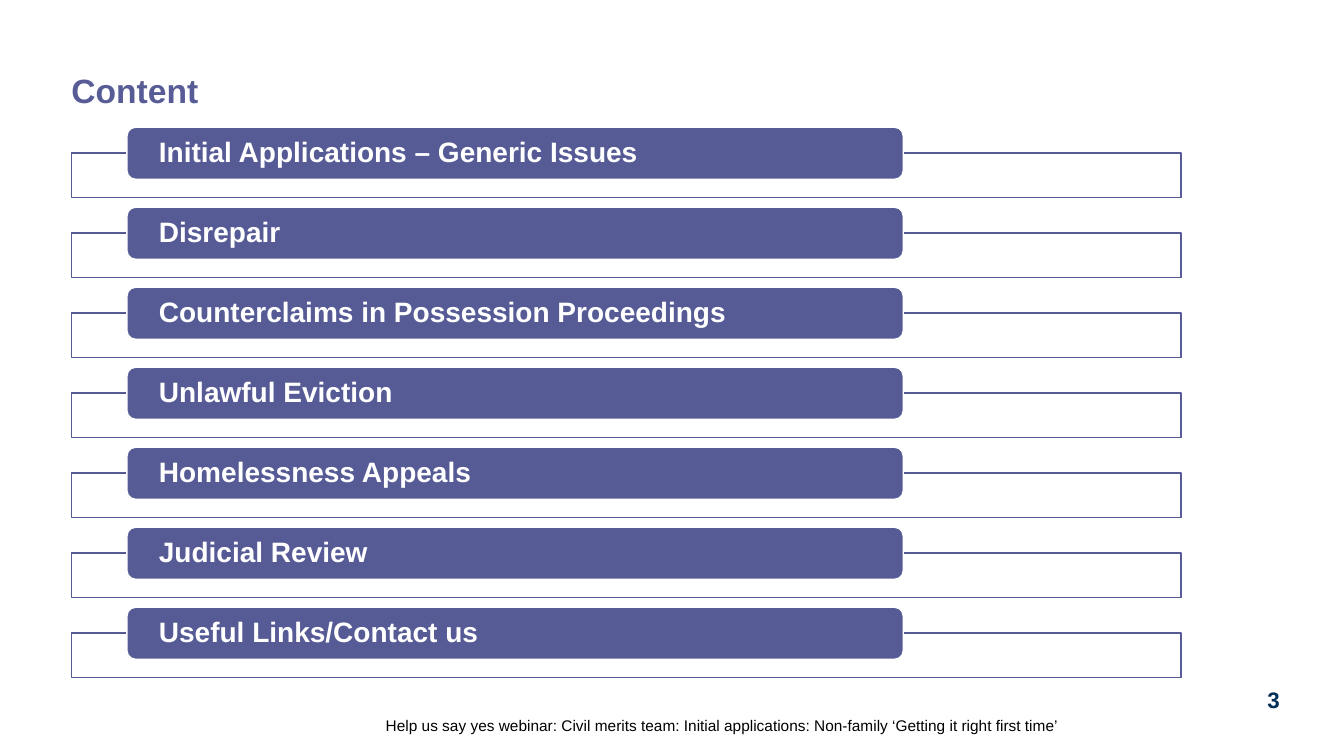
from dataclasses import dataclass

from lxml.etree import SubElement
from pptx import Presentation
from pptx.dml.color import RGBColor as Color
from pptx.enum.shapes import MSO_SHAPE as Shape
from pptx.enum.text import MSO_ANCHOR as Anchor, PP_ALIGN as Align
from pptx.oxml.ns import qn
from pptx.util import Pt


@dataclass(frozen=True)
class Theme:
    font: str = "Arial"
    title: Color = Color.from_string("575C96")
    bar: Color = Color.from_string("565B96")
    white: Color = Color.from_string("FFFFFF")
    number: Color = Color.from_string("003057")
    footer: Color = Color.from_string("000000")
    title_size: int = 24
    bar_size: int = 20
    number_size: int = 16
    footer_size: int = 11


theme = Theme()


def write(shape, text, size, color, bold=True, align=Align.LEFT,
          anchor=Anchor.TOP, side_margin=0, line_spacing=1.0):
    frame = shape.text_frame
    frame.word_wrap = True
    frame.vertical_anchor = anchor
    frame.margin_left = frame.margin_right = Pt(side_margin)
    frame.margin_top = frame.margin_bottom = 0
    paragraph = frame.paragraphs[0]
    paragraph.alignment = align
    paragraph.line_spacing = line_spacing
    run = paragraph.add_run()
    run.text = text
    run.font.name = theme.font
    run.font.size = Pt(size)
    run.font.bold = bold
    run.font.color.rgb = color


def add_panel(kind, left, top, width, height, fill, line):
    shape = slide.shapes.add_shape(kind, Pt(left), Pt(top), Pt(width), Pt(height))
    shape.shadow.inherit = False
    shape.fill.solid()
    shape.fill.fore_color.rgb = fill
    shape.line.color.rgb = line
    shape.line.width = Pt(1)
    return shape


presentation = Presentation()
presentation.slide_width = Pt(960)
presentation.slide_height = Pt(540)
slide = presentation.slides.add_slide(presentation.slide_layouts[6])

# Title
title = slide.shapes.add_textbox(Pt(51), Pt(53.3), Pt(867), Pt(27.4))
write(title, "Content", theme.title_size, theme.title, line_spacing=0.9)

# Topic list: an outlined frame behind each rounded bar
topics = [
    "Initial Applications – Generic Issues",
    "Disrepair",
    "Counterclaims in Possession Proceedings",
    "Unlawful Eviction",
    "Homelessness Appeals",
    "Judicial Review",
    "Useful Links/Contact us",
]
first_top, pitch = 90.9, 57.15
for index, topic in enumerate(topics):
    top = first_top + index * pitch
    outline = add_panel(Shape.RECTANGLE, 51, top + 18.5, 792.5, 31.7,
                        theme.white, theme.bar)
    fill_color = outline.fill._xPr.find(qn("a:solidFill"))[0]
    SubElement(fill_color, qn("a:alpha"), val="90000")
    bar = add_panel(Shape.ROUNDED_RECTANGLE, 90.7, top, 554.5, 37.2,
                    theme.bar, theme.white)
    write(bar, topic, theme.bar_size, theme.white, anchor=Anchor.MIDDLE,
          side_margin=21, line_spacing=0.9)

# Page number and footer
number = slide.shapes.add_textbox(Pt(895.7), Pt(490.3), Pt(28), Pt(20))
write(number, "3", theme.number_size, theme.number, align=Align.CENTER)

footer = slide.shapes.add_textbox(Pt(41), Pt(498.5), Pt(715.5), Pt(26))
write(footer, "Help us say yes webinar: Civil merits team: Initial applications: "
      "Non-family ‘Getting it right first time’", theme.footer_size, theme.footer,
      bold=False, align=Align.RIGHT, anchor=Anchor.BOTTOM)

presentation.save("out.pptx")
